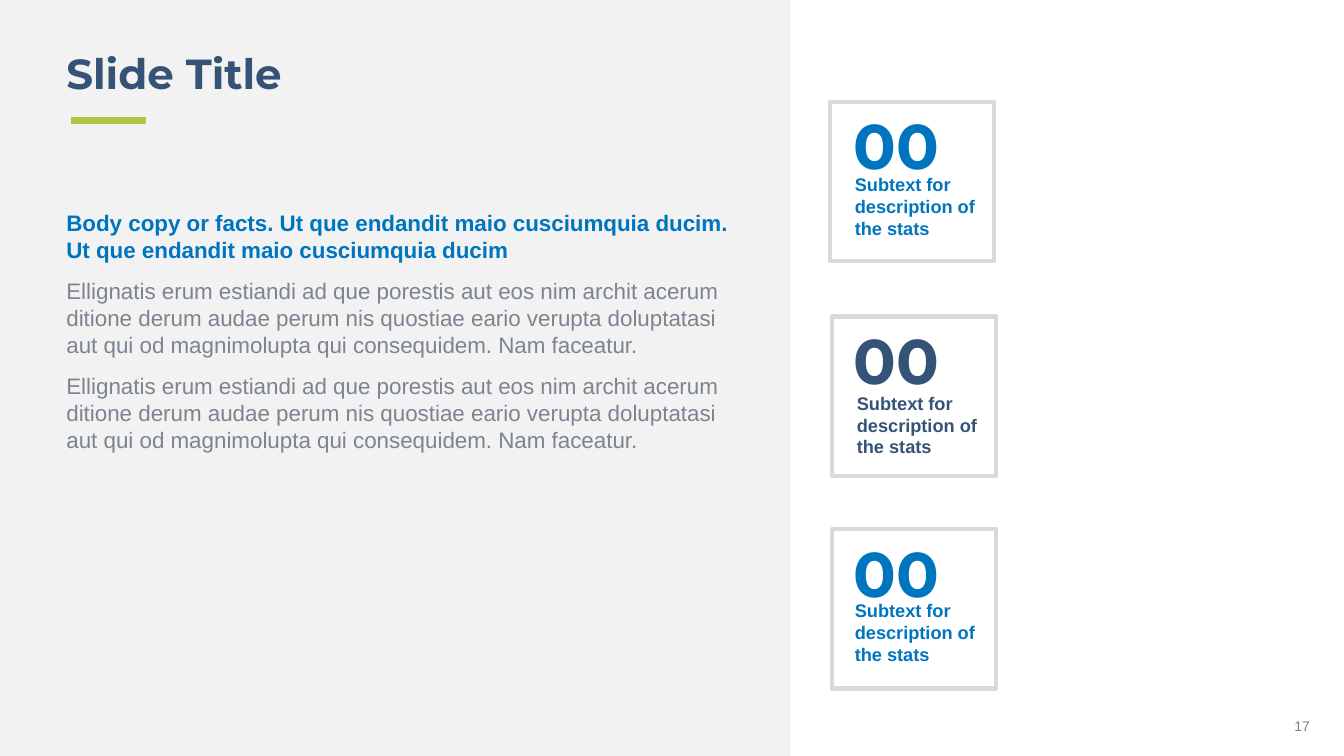
from lxml import etree
from pptx import Presentation
from pptx.dml.color import RGBColor
from pptx.enum.shapes import MSO_CONNECTOR, MSO_SHAPE
from pptx.enum.text import MSO_ANCHOR, PP_ALIGN
from pptx.oxml.ns import qn
from pptx.util import Inches, Pt

RECTANGLE = MSO_SHAPE.RECTANGLE
STRAIGHT = MSO_CONNECTOR.STRAIGHT
MIDDLE = MSO_ANCHOR.MIDDLE
LEFT, RIGHT = PP_ALIGN.LEFT, PP_ALIGN.RIGHT

COLORS = {
    "panel": "F2F2F2",
    "navy": "355376",
    "blue": "0075BF",
    "slate": "7B8490",
    "number": "808080",
    "frame": "D9D9D9",
    "accent": "B4C641",
}
HEADING_FONT, BODY_FONT = "Montserrat", "Arial"


def color(name):
    return RGBColor.from_string(COLORS[name])


def add_text(box, paragraphs, size, font, space=0, align=LEFT):
    area = slide.shapes.add_textbox(*map(Inches, box))
    frame = area.text_frame
    frame.word_wrap = True
    for index, (text, tint, bold) in enumerate(paragraphs):
        paragraph = frame.add_paragraph() if index else frame.paragraphs[0]
        paragraph.text = text
        paragraph.alignment = align
        paragraph.space_before = Pt(space)
        paragraph.font.size = Pt(size)
        paragraph.font.name = font
        paragraph.font.bold = bold
        paragraph.font.color.rgb = color(tint)
    return frame


deck = Presentation()
deck.slide_width, deck.slide_height = Inches(13.33), Inches(7.5)
slide = deck.slides.add_slide(deck.slide_layouts[6])

panel = slide.shapes.add_shape(RECTANGLE, 0, 0, Inches(7.84), deck.slide_height)
panel.shadow.inherit = False
panel.fill.solid()
panel.fill.fore_color.rgb = color("panel")
panel.line.fill.background()

title = add_text((0.56, 0.48, 6.63, 1.11), [("Slide Title", "navy", True)],
                 30, HEADING_FONT, space=10)
title.paragraphs[0].line_spacing = 0.9

page_number = add_text((10.09, 7.05, 3, 0.3), [("17", "number", False)],
                       10, BODY_FONT, align=RIGHT)
page_number.vertical_anchor = MIDDLE

lead = ("Body copy or facts. Ut que endandit maio cusciumquia ducim. "
        "Ut que endandit maio cusciumquia ducim")
detail = ("Ellignatis erum estiandi ad que porestis aut eos nim archit acerum "
          "ditione derum audae perum nis quostiae eario verupta doluptatasi "
          "aut qui od magnimolupta qui consequidem. Nam faceatur.")
add_text((0.56, 2.03, 6.89, 4.97),
         [(lead, "blue", True)] + [(detail, "slate", False)] * 2,
         16, BODY_FONT, space=10)

stats = [
    (8.23, 1.01, "blue", (8.38, 1.67, 1.75)),
    (8.25, 3.14, "navy", (8.4, 3.84, 1.98)),
    (8.25, 5.25, "blue", (8.38, 5.9, 1.75)),
]
for card_left, card_top, tint, (sub_left, sub_top, sub_width) in stats:
    add_text((8.37, card_top, 1.5, 0.86), [("00", tint, True)], 45, HEADING_FONT)
    add_text((sub_left, sub_top, sub_width, 0.76),
             [("Subtext for description of \vthe stats", tint, True)], 13, BODY_FONT)
    card = slide.shapes.add_shape(
        RECTANGLE, *map(Inches, (card_left, card_top, 1.63, 1.58)))
    card.shadow.inherit = False
    card.fill.background()
    card.line.color.rgb = color("frame")
    card.line.width = Pt(3)

underline = slide.shapes.add_connector(
    STRAIGHT, *map(Inches, (0.7, 1.2, 1.45, 1.2)))
underline.line.color.rgb = color("accent")
underline.line.width = Pt(5)
etree.SubElement(underline._element.spPr, qn("a:effectLst"))

deck.save("out.pptx")
